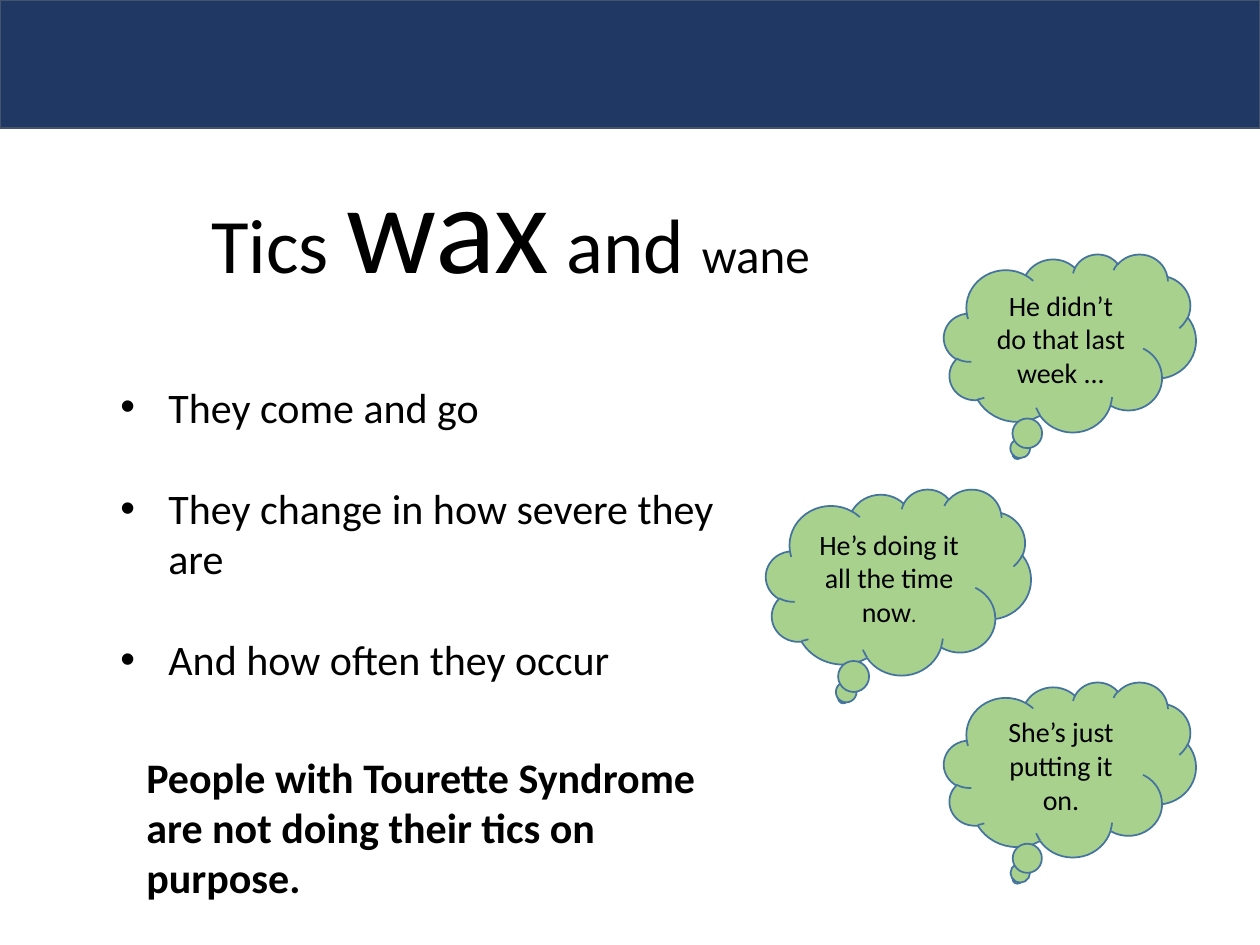
import pptx
import pptx.util
import pptx.dml.color
import pptx.enum.shapes
import pptx.enum.text
import pptx.oxml
import pptx.oxml.ns

PX = 914400 / 126
FONT = "Calibri"
COLORS = {"navy": "203864", "slate": "44546A", "green": "A9D18E",
          "blue": "43739E", "text": "000000"}

BAND = (0, 0, 1260, 128)
TITLE = {"box": (108, 141, 805, 165),
         "runs": [("Tics ", 44), ("wax", 72), (" and ", 44), ("wane", 28)]}
BULLETS = {"box": (108, 375, 672, 350),
           "items": ["They come and go",
                     "They change in how severe they are",
                     "And how often they occur"]}
CLOUDS = [
    ((944, 254, 252, 178), [("He didn’t do that last week ...", 16)]),
    ((766, 489, 265, 186), [("He’s doing it all the time now", 16), (".", 12)]),
    ((944, 682, 252, 175), [("She’s just putting it on.", 16)]),
]
CLOSING = {"box": (134, 745, 632, 165),
           "text": "People with Tourette Syndrome are not doing their tics on purpose."}

SHAPE = pptx.enum.shapes.MSO_SHAPE
ALIGN = pptx.enum.text.PP_ALIGN
ANCHOR = pptx.enum.text.MSO_ANCHOR
FRAME = {"word_wrap": True, "auto_size": pptx.enum.text.MSO_AUTO_SIZE.NONE}


def emu(box):
    return [round(v * PX) for v in box]


def rgb(name):
    return pptx.dml.color.RGBColor.from_string(COLORS[name])


def set_all(target, values):
    for name, value in values.items():
        setattr(target, name, value)


def add_runs(p, runs, bold=False):
    for text, size in runs:
        r = p.add_run()
        r.text = text
        set_all(r.font, {"name": FONT, "size": pptx.util.Pt(size), "bold": bold})
        r.font.color.rgb = rgb("text")


def add_shape(s, kind, box, fill, line):
    sp = s.shapes.add_shape(kind, *emu(box))
    sp.shadow.inherit = False
    sp.fill.solid()
    sp.fill.fore_color.rgb = rgb(fill)
    sp.line.color.rgb = rgb(line)
    sp.line.width = pptx.util.Pt(1)
    return sp


def add_text(s, box):
    tf = s.shapes.add_textbox(*emu(box)).text_frame
    set_all(tf, FRAME)
    return tf


def add_bullet(p):
    pPr = p._p.get_or_add_pPr()
    indent = round(48 * PX)
    pPr.set("marL", str(indent))
    pPr.set("indent", str(-indent))
    for tag, key, value in (("buFont", "typeface", "Arial"), ("buChar", "char", "•")):
        el = pptx.oxml.parse_xml(f'<a:{tag} {pptx.oxml.ns.nsdecls("a")}/>')
        el.set(key, value)
        pPr.append(el)


def main():
    prs = pptx.Presentation()
    prs.slide_width, prs.slide_height = emu((1260, 945))
    s = prs.slides.add_slide(prs.slide_layouts[5])

    add_shape(s, SHAPE.RECTANGLE, BAND, "navy", "slate")

    title = s.shapes.title
    set_all(title, dict(zip(("left", "top", "width", "height"), emu(TITLE["box"]))))
    tf = title.text_frame
    set_all(tf, {**FRAME, "vertical_anchor": ANCHOR.TOP})
    tf.paragraphs[0].alignment = ALIGN.CENTER
    add_runs(tf.paragraphs[0], TITLE["runs"])

    tf = add_text(s, BULLETS["box"])
    for i, item in enumerate(BULLETS["items"]):
        p = tf.add_paragraph() if i else tf.paragraphs[0]
        if i:
            p.space_before = pptx.util.Pt(29)
        add_bullet(p)
        add_runs(p, [(item, 24)])

    for box, runs in CLOUDS:
        sp = add_shape(s, SHAPE.CLOUD_CALLOUT, box, "green", "blue")
        tf = sp.text_frame
        set_all(tf, {**FRAME, "vertical_anchor": ANCHOR.MIDDLE})
        tf.paragraphs[0].alignment = ALIGN.CENTER
        add_runs(tf.paragraphs[0], runs)

    tf = add_text(s, CLOSING["box"])
    add_runs(tf.paragraphs[0], [(CLOSING["text"], 24)], bold=True)

    prs.save("out.pptx")


if __name__ == "__main__":
    main()
